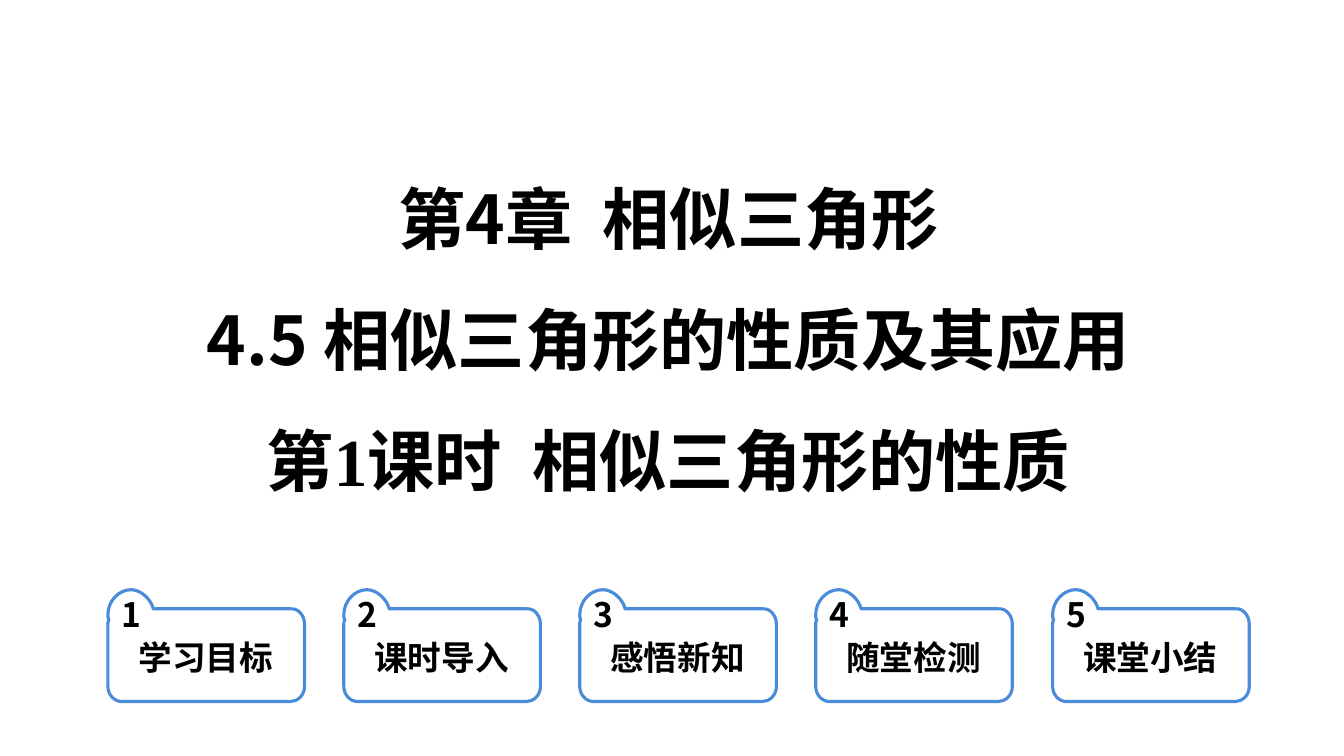
from pptx import Presentation
from pptx.dml.color import RGBColor
from pptx.enum.text import MSO_AUTO_SIZE, PP_ALIGN
from pptx.oxml.ns import qn
from pptx.util import Pt

PX = 9144  # 100 px to the inch
SANS, SERIF = "Noto Sans CJK SC", "Times New Roman"

TITLE_LINES = [
    ("第4章  相似三角形", SANS),
    ("4.5 相似三角形的性质及其应用", SANS),
    ("第1课时  相似三角形的性质", SERIF),
]
SECTIONS = ["学习目标", "课时导入", "感悟新知", "随堂检测", "课堂小结"]
FIRST_LEFT, LAST_LEFT, TAB_TOP = 107, 1044, 585

# Tab outline relative to its corner: one point is a line, three are a curve
TAB_START = (0, 25)
TAB_OUTLINE = [
    [(0, 11), (11, 0), (23, 0)],
    [(33, 0), (43, 10), (45, 19)],
    [(181, 19)],
    [(189, 18), (195, 26), (195, 34)],
    [(195, 96)],
    [(195, 105), (188, 111), (181, 111)],
    [(14, 111)],
    [(6, 111), (0, 104), (0, 96)],
    [(0, 34)],
    [(0, 33), (0, 31), (1, 30)],
    [(0, 29), (0, 26), (0, 25)],
]


def color(value):
    return RGBColor.from_string(value)


def add_text(shapes, box_px, lines, size, align, spacing=None, wrap=True):
    """Add a bold black text box; lines holds (text, font) pairs."""
    box = shapes.add_textbox(*[n * PX for n in box_px])
    frame = box.text_frame
    frame.word_wrap = wrap
    frame.auto_size = MSO_AUTO_SIZE.SHAPE_TO_FIT_TEXT
    for index, (text, font) in enumerate(lines):
        para = frame.paragraphs[0] if index == 0 else frame.add_paragraph()
        para.alignment, para.line_spacing = align, spacing
        span = para.add_run()
        span.text = text
        for name, value in {"name": font, "size": Pt(size), "bold": True}.items():
            setattr(span.font, name, value)
        span.font.color.rgb = color("000000")
        east_asian = span.font._element.makeelement(qn("a:ea"), {"typeface": SANS})
        span.font._element.append(east_asian)


deck = Presentation()
deck.slide_width, deck.slide_height = 1333 * PX, 750 * PX
page = deck.slides.add_slide(deck.slide_layouts[6])

add_text(page.shapes, (179, 131, 968, 374), TITLE_LINES, 48, PP_ALIGN.CENTER, 1.5, False)

for index, section in enumerate(SECTIONS):
    left = FIRST_LEFT + index * (LAST_LEFT - FIRST_LEFT) // (len(SECTIONS) - 1)
    group = page.shapes.add_group_shape()
    builder = group.shapes.build_freeform(*TAB_START, scale=PX)
    builder.add_line_segments([point for segment in TAB_OUTLINE for point in segment])
    tab = builder.convert_to_shape(left * PX, TAB_TOP * PX)

    # Join each three-point segment into one Bézier curve
    lines = iter(list(tab._element.iter(qn("a:lnTo"))))
    for segment in TAB_OUTLINE:
        steps = [next(lines) for _ in segment]
        if len(steps) == 3:
            curve = steps[0].makeelement(qn("a:cubicBezTo"), {})
            steps[0].addprevious(curve)
            for step in steps:
                curve.append(step[0])
                step.getparent().remove(step)

    tab.shadow.inherit = False
    tab.fill.solid()
    tab.fill.fore_color.rgb = color("FFFFFF")
    tab.line.color.rgb = color("4A8BDA")
    tab.line.width = Pt(2.25)
    add_text(group.shapes, (left + 4, 584, 186, 50), [(str(index + 1), SANS)], 24, PP_ALIGN.LEFT)
    add_text(group.shapes, (left + 4, 627, 186, 50), [(section, SANS)], 24, PP_ALIGN.CENTER)

deck.save("out.pptx")
